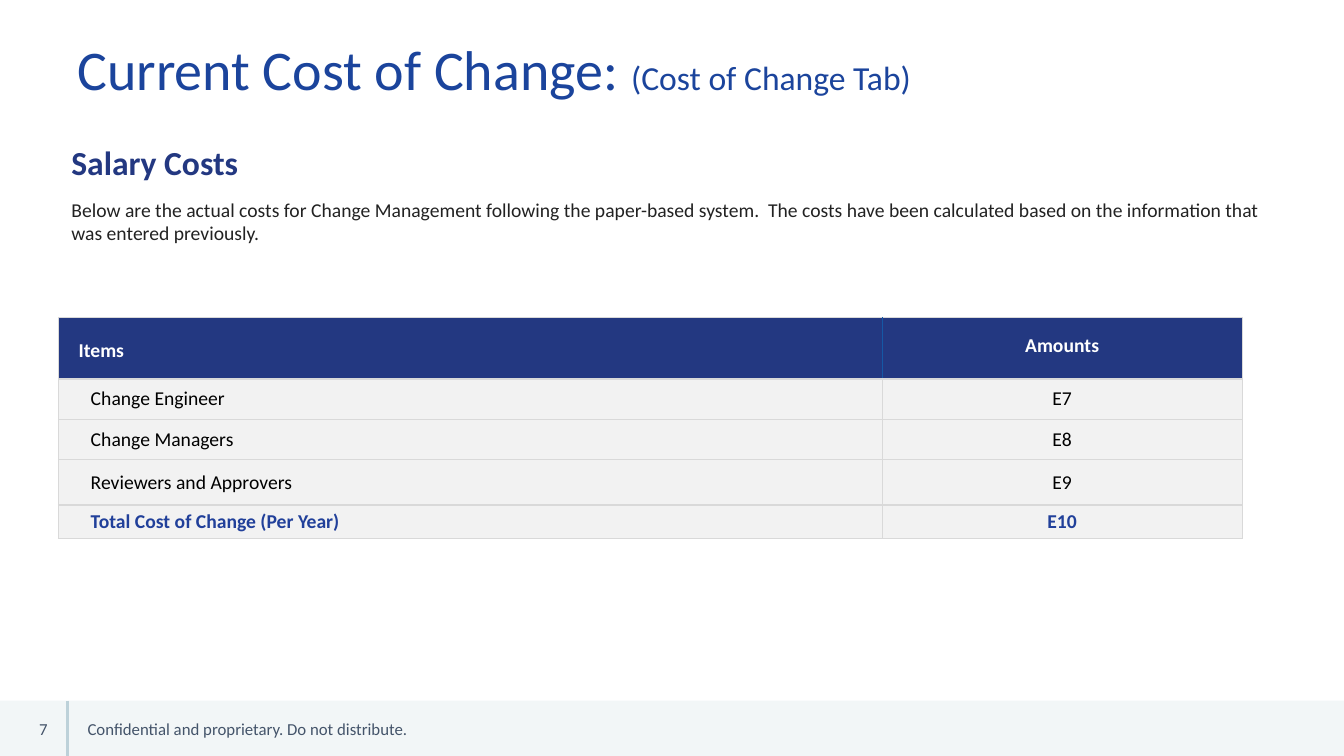
from dataclasses import dataclass

import pptx
import pptx.dml.color
import pptx.enum.shapes
import pptx.enum.text
import pptx.oxml
import pptx.oxml.ns
import pptx.util
from lxml import etree

Inches = pptx.util.Inches
Pt = pptx.util.Pt
Align = pptx.enum.text.PP_ALIGN
Anchor = pptx.enum.text.MSO_ANCHOR

FONT = "Calibri"
NAVY, TITLE_BLUE, TOTAL_BLUE = "233881", "1B449C", "21409A"
SLATE, BORDER, HEADER_DIVIDER = "44546A", "D9D9D9", "1558A5"


@dataclass
class Label:
    text: str
    left: float
    top: float
    width: float
    height: float
    size: float
    color: str
    bold: bool = False
    align: Align = Align.LEFT
    anchor: Anchor = Anchor.TOP
    inset_top: float = 0.05
    line_spacing: float = 1.0
    space_after: float = 0
    suffix: str = ""
    suffix_size: float = 0


@dataclass
class CostRow:
    item: str
    amount: str
    height: float
    color: str = "000000"
    fill: str = "F2F2F2"
    bold: bool = False
    indent: float = 0.12
    item_top: float = 0.05
    amount_top: float = 0.05


LABELS = [
    Label("Confidential and proprietary. Do not distribute.", 0.77, 6.97, 3.66, 0.53,
          12, SLATE, anchor=Anchor.MIDDLE),
    Label("Current Cost of Change: ", 0.67, 0.37, 12, 0.77, 40, TITLE_BLUE,
          line_spacing=0.9, suffix="(Cost of Change Tab)", suffix_size=24),
    Label("7", 0.06, 6.95, 0.51, 0.55, 12, SLATE, align=Align.RIGHT, anchor=Anchor.MIDDLE),
    Label("Salary Costs", 0.61, 1.4, 12.27, 0.4, 24, NAVY, bold=True,
          line_spacing=0.9, space_after=6),
    Label("Below are the actual costs for Change Management following the paper-based system.  "
          "The costs have been calculated based on the information that was entered previously.",
          0.61, 1.86, 12.27, 0.88, 14, "222222", inset_top=0.1, space_after=6),
]

COLUMN_WIDTHS = [8.17, 3.57]
COST_ROWS = [
    CostRow("Items", "Amounts", 0.61, "FFFFFF", NAVY, True, 0, 0.1, 0.01),
    CostRow("Change Engineer", "E7", 0.4),
    CostRow("Change Managers", "E8", 0.4),
    CostRow("Reviewers and Approvers", "E9", 0.45),
    CostRow("Total Cost of Change (Per Year)", "E10", 0.33, TOTAL_BLUE, bold=True),
]


def rgb(color: str) -> pptx.dml.color.RGBColor:
    return pptx.dml.color.RGBColor.from_string(color)


def style_font(font, size: float, color: str, bold: bool) -> None:
    font.name = FONT
    font.size = Pt(size)
    font.bold = bold
    font.color.rgb = rgb(color)


def add_label(slide, label: Label) -> None:
    sp = slide.shapes.add_textbox(Inches(label.left), Inches(label.top),
                                  Inches(label.width), Inches(label.height))
    tf = sp.text_frame
    tf.word_wrap = True
    tf.vertical_anchor = label.anchor
    tf.margin_top = Inches(label.inset_top)
    p = tf.paragraphs[0]
    p.alignment = label.align
    p.line_spacing = label.line_spacing
    p.space_after = Pt(label.space_after)
    style_font(p.font, label.size, label.color, label.bold)
    p.add_run().text = label.text
    if label.suffix:
        r = p.add_run()
        r.text = label.suffix
        r.font.size = Pt(label.suffix_size)


def add_footer_band(slide) -> None:
    band = slide.shapes.add_shape(pptx.enum.shapes.MSO_SHAPE.RECTANGLE, 0, Inches(6.95),
                                  Inches(13.33), Inches(0.55))
    band.shadow.inherit = False
    band.fill.solid()
    band.fill.fore_color.rgb = rgb("F2F6F7")
    band.line.fill.background()
    divider = slide.shapes.add_connector(pptx.enum.shapes.MSO_CONNECTOR.STRAIGHT, Inches(0.67),
                                         Inches(6.95), Inches(0.67), Inches(7.5))
    divider.line.color.rgb = rgb("BDD1D9")
    divider.line.width = Pt(2.25)
    etree.SubElement(divider.element.spPr, pptx.oxml.ns.qn("a:effectLst"))


def set_borders(cell, colors: dict[str, str]) -> None:
    """Draw 1 pt borders; they must precede the fill in the cell properties."""
    tc_pr = cell._tc.get_or_add_tcPr()
    for i, (side, color) in enumerate(colors.items()):
        tc_pr.insert(i, pptx.oxml.parse_xml(
            f'<a:ln{side} {pptx.oxml.ns.nsdecls("a")} w="{Pt(1)}"><a:solidFill>'
            f'<a:srgbClr val="{color}"/></a:solidFill></a:ln{side}>'))


def fill_cell(cell, row: CostRow, column: int, is_header: bool) -> None:
    is_item = column == 0
    cell.fill.solid()
    cell.fill.fore_color.rgb = rgb(row.fill)
    cell.vertical_anchor = Anchor.MIDDLE
    cell.margin_left = Inches(0.2 if is_item else 0.1)
    cell.margin_top = Inches(row.item_top if is_item else row.amount_top)
    p = cell.text_frame.paragraphs[0]
    p.text = row.item if is_item else row.amount
    p.alignment = Align.LEFT if is_item else Align.CENTER
    if is_item:
        p._p.get_or_add_pPr().set("marL", str(Inches(row.indent)))
    style_font(p.font, 14, row.color, row.bold)
    borders = dict.fromkeys("LRTB", BORDER)
    if is_header:
        borders["R" if is_item else "L"] = HEADER_DIVIDER
    set_borders(cell, borders)


def add_cost_table(slide) -> None:
    table = slide.shapes.add_table(
        len(COST_ROWS), len(COLUMN_WIDTHS), Inches(0.58), Inches(3.15),
        Inches(sum(COLUMN_WIDTHS)), Inches(sum(row.height for row in COST_ROWS))).table
    table.horz_banding = False
    for column, width in enumerate(COLUMN_WIDTHS):
        table.columns[column].width = Inches(width)
    for i, row in enumerate(COST_ROWS):
        table.rows[i].height = Inches(row.height)
        for column in range(len(COLUMN_WIDTHS)):
            fill_cell(table.cell(i, column), row, column, i == 0)


def main() -> None:
    prs = pptx.Presentation()
    prs.slide_width, prs.slide_height = Inches(13.33), Inches(7.5)
    slide = prs.slides.add_slide(prs.slide_layouts[6])
    add_footer_band(slide)
    for label in LABELS:
        add_label(slide, label)
    add_cost_table(slide)
    prs.save("out.pptx")


if __name__ == "__main__":
    main()
